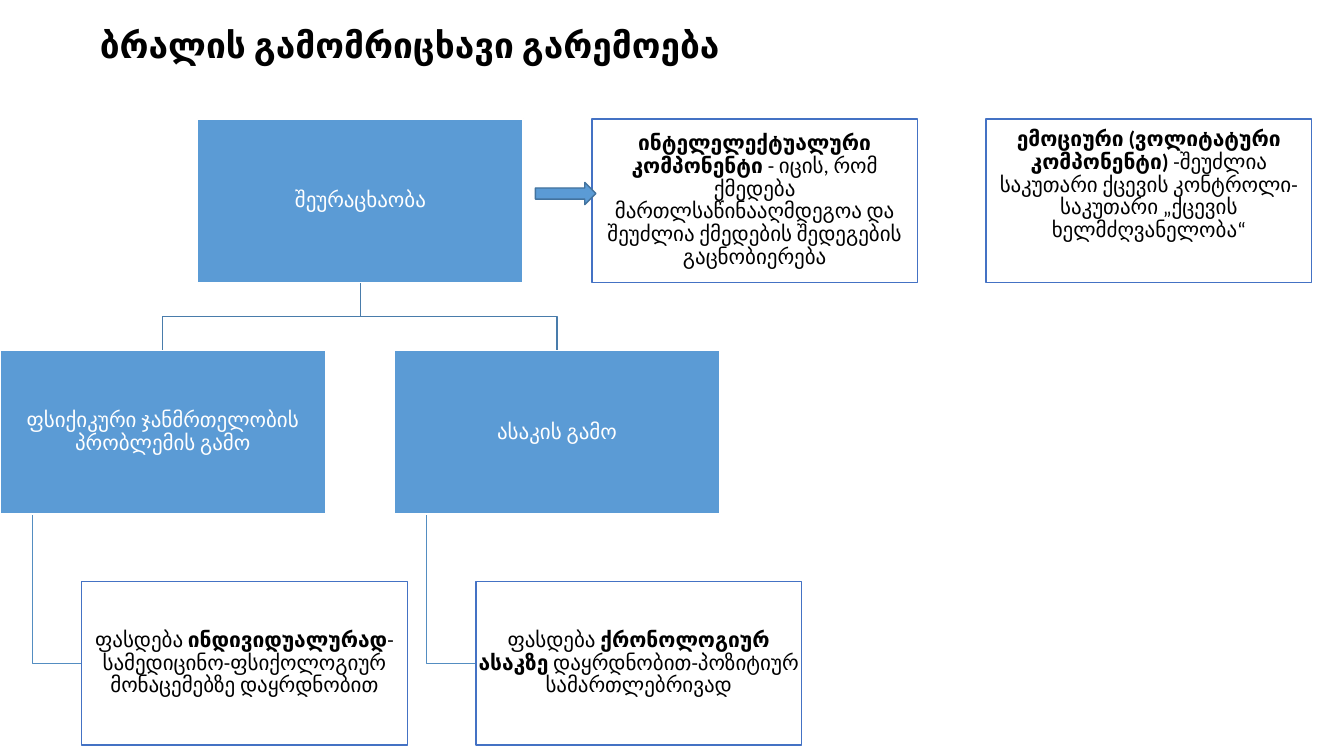
import pptx
import pptx.util
import pptx.dml.color
import pptx.enum.shapes
import pptx.enum.text
from dataclasses import dataclass

Inches = pptx.util.Inches
Pt = pptx.util.Pt
Shapes = pptx.enum.shapes.MSO_SHAPE
Align = pptx.enum.text.PP_ALIGN


@dataclass(frozen=True)
class Theme:
    font: str = "Calibri"
    title_size: float = 25.2
    body_size: float = 15
    ink: str = "000000"
    paper: str = "FFFFFF"
    blue: str = "5B9BD5"
    note_border: str = "4472C4"
    arrow_border: str = "43739E"
    upper_link: str = "497CAB"
    lower_link: str = "538DC1"


theme = Theme()


def rgb(value):
    return pptx.dml.color.RGBColor.from_string(value)


def write(frame, runs, size=theme.body_size, color=theme.ink,
          align=Align.CENTER, inset=0.01, bottom=0.01):
    """Fill a frame with (text, bold) runs in one paragraph."""
    frame.word_wrap = True
    frame.auto_size = pptx.enum.text.MSO_AUTO_SIZE.NONE
    frame.vertical_anchor = pptx.enum.text.MSO_ANCHOR.MIDDLE
    frame.margin_left = frame.margin_right = Inches(inset)
    frame.margin_top, frame.margin_bottom = Inches(0.01), Inches(bottom)
    paragraph = frame.paragraphs[0]
    paragraph.alignment = align
    paragraph.line_spacing = 0.9
    for text, bold in runs:
        run = paragraph.add_run()
        run.text = text
        run.font.name = theme.font
        run.font.size = Pt(size)
        run.font.bold = bold
        run.font.color.rgb = rgb(color)


deck = pptx.Presentation()
deck.slide_width, deck.slide_height = Inches(13.33), Inches(7.5)
slide = deck.slides.add_slide(deck.slide_layouts[5])

# Title
heading = slide.shapes.title
heading.left, heading.top = Inches(0.89), Inches(0.21)
heading.width, heading.height = Inches(11.5), Inches(0.51)
write(heading.text_frame, [("ბრალის გამომრიცხავი გარემოება", True)],
      size=theme.title_size, align=Align.LEFT, inset=0.1)

# Chart grid: equal boxes, columns one pitch apart
box_width, box_height, pitch = 3.23, 1.62, 3.91
top_row, cause_row, basis_row = 1.18, 3.48, 5.77
root_left, basis_left = 1.96, 0.81
root_center, root_bottom = root_left + box_width / 2, top_row + box_height
fork = (root_bottom + cause_row) / 2

# Links from the root to each cause, and from each cause to its basis
links = []
for column in range(2):
    cause_left = column * pitch
    cause_center = cause_left + box_width / 2
    stem = cause_left + 0.32
    basis_middle = basis_row + box_height / 2
    links.append((theme.upper_link, [(root_center, root_bottom), (root_center, fork),
                                     (cause_center, fork), (cause_center, cause_row)]))
    links.append((theme.lower_link, [(stem, cause_row + box_height), (stem, basis_middle),
                                     (cause_left + basis_left, basis_middle)]))
for color, points in links:
    start, *corners = [(Inches(x), Inches(y)) for x, y in points]
    builder = slide.shapes.build_freeform(*start)
    builder.add_line_segments(corners, close=False)
    link = builder.convert_to_shape()
    link.shadow.inherit = False
    link.fill.background()
    link.line.color.rgb = rgb(color)
    link.line.width = Pt(1)

# Boxes: left, top, filled blue, bottom inset, runs
boxes = [
    (root_left, top_row, True, 0.01, [("შეურაცხაობა", False)]),
    (0, cause_row, True, 0.01, [("ფსიქიკური ჯანმრთელობის პრობლემის გამო", False)]),
    (basis_left, basis_row, False, 0.01, [
        ("ფასდება ", False), ("ინდივიდუალურად", True),
        ("- სამედიცინო-ფსიქოლოგიურ მონაცემებზე დაყრდნობით", False)]),
    (pitch, cause_row, True, 0.01, [("ასაკის გამო", False)]),
    (basis_left + pitch, basis_row, False, 0.01, [
        ("ფასდება ", False), ("ქრონოლოგიურ ასაკზე ", True),
        ("დაყრდნობით-პოზიტიურ სამართლებრივად", False)]),
    (root_left + pitch, top_row, False, 0.01, [
        ("ინტელელექტუალური კომპონენტი ", True),
        ("- იცის, რომ ქმედება მართლსაწინააღმდეგოა და შეუძლია ქმედების "
         "შედეგების გაცნობიერება", False)]),
    (root_left + 2 * pitch, top_row, False, 0.31, [
        ("ემოციური (ვოლიტატური კომპონენტი) ", True),
        ("-შეუძლია საკუთარი ქცევის კონტროლი-საკუთარი „ქცევის ხელმძღვანელობა“", False)]),
]
for left, top, filled, bottom, runs in boxes:
    box = slide.shapes.add_shape(Shapes.RECTANGLE, Inches(left), Inches(top),
                                 Inches(box_width), Inches(box_height))
    box.shadow.inherit = False
    box.fill.solid()
    box.fill.fore_color.rgb = rgb(theme.blue if filled else theme.paper)
    box.line.color.rgb = rgb(theme.paper if filled else theme.note_border)
    box.line.width = Pt(1)
    write(box.text_frame, runs, color=theme.paper if filled else theme.ink, bottom=bottom)

# Arrow from the root to its components
arrow = slide.shapes.add_shape(Shapes.RIGHT_ARROW, Inches(5.31), Inches(1.81),
                               Inches(0.6), Inches(0.22))
arrow.shadow.inherit = False
arrow.fill.solid()
arrow.fill.fore_color.rgb = rgb(theme.blue)
arrow.line.color.rgb = rgb(theme.arrow_border)
arrow.line.width = Pt(1)

deck.save("out.pptx")
